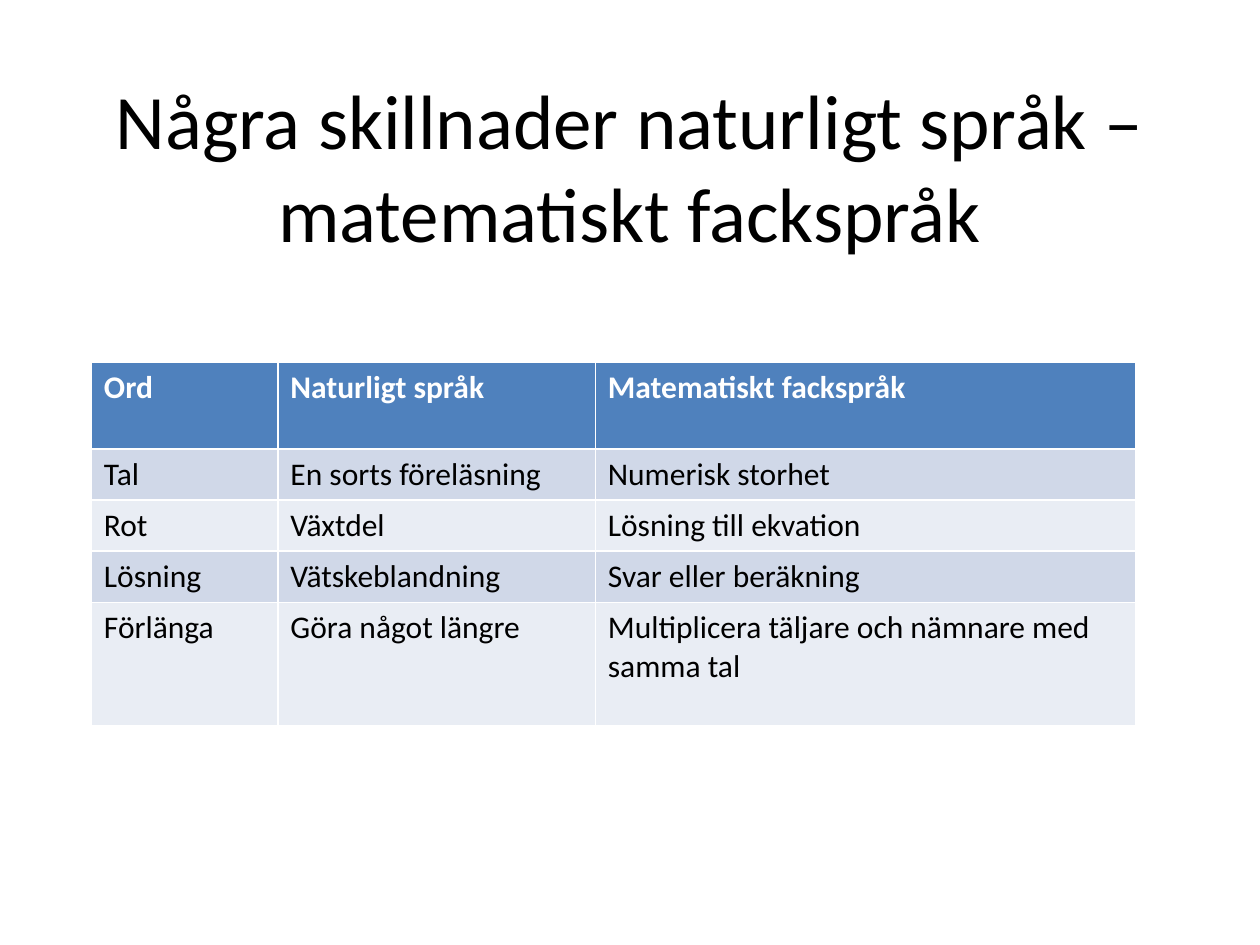
"""Build a slide comparing words in everyday and mathematical Swedish."""
from pptx import Presentation
from pptx import util as u
from pptx.dml.color import RGBColor
from pptx.enum import text

TITLE = "Några skillnader naturligt språk – matematiskt fackspråk"
ROWS = [
    ("Ord", "Naturligt språk", "Matematiskt fackspråk"),
    ("Tal", "En sorts föreläsning", "Numerisk storhet"),
    ("Rot", "Växtdel", "Lösning till ekvation"),
    ("Lösning", "Vätskeblandning", "Svar eller beräkning"),
    ("Förlänga", "Göra något längre", "Multiplicera täljare och nämnare med samma tal"),
]
COLUMN_WIDTHS = [106.6, 181.4, 308.9]
ROW_HEIGHTS = [49.7, 29.2, 29.2, 29.2, 70.6]
COLORS = {"header": "4F81BD", "odd": "D0D8E8", "even": "E9EDF4",
          "light": "FFFFFF", "dark": "000000"}


def style_font(font, size, color, bold=False):
    font.name = "Calibri"
    font.size = u.Pt(size)
    font.bold = bold
    font.color.rgb = RGBColor.from_string(COLORS[color])


def add_title(page):
    box = page.shapes.title
    box.left, box.top, box.width, box.height = map(u.Pt, (36, 36.7, 648, 90))
    frame = box.text_frame
    frame.text = TITLE
    frame.word_wrap = True
    frame.auto_size = text.MSO_AUTO_SIZE.NONE
    frame.vertical_anchor = text.MSO_ANCHOR.TOP
    frame.margin_top = u.Pt(5)
    para = frame.paragraphs[0]
    para.alignment = text.PP_ALIGN.CENTER
    style_font(para.font, 44, "dark")


def add_word_table(page):
    size = (sum(COLUMN_WIDTHS), sum(ROW_HEIGHTS))
    table = page.shapes.add_table(len(ROWS), len(COLUMN_WIDTHS),
                                  *map(u.Pt, (52.2, 206.9, *size))).table
    for column, width in zip(table.columns, COLUMN_WIDTHS):
        column.width = u.Pt(width)
    for index, (row, height, words) in enumerate(zip(table.rows, ROW_HEIGHTS, ROWS)):
        row.height = u.Pt(height)
        header = index == 0
        fill = "header" if header else "odd" if index % 2 else "even"
        for cell, word in zip(row.cells, words):
            cell.text = word
            cell.fill.solid()
            cell.fill.fore_color.rgb = RGBColor.from_string(COLORS[fill])
            style_font(cell.text_frame.paragraphs[0].font, 18,
                       "light" if header else "dark", header)


def main():
    deck = Presentation()
    deck.slide_width, deck.slide_height = u.Pt(720), u.Pt(540)
    page = deck.slides.add_slide(deck.slide_layouts[5])
    add_word_table(page)
    add_title(page)
    deck.save("out.pptx")


if __name__ == "__main__":
    main()
